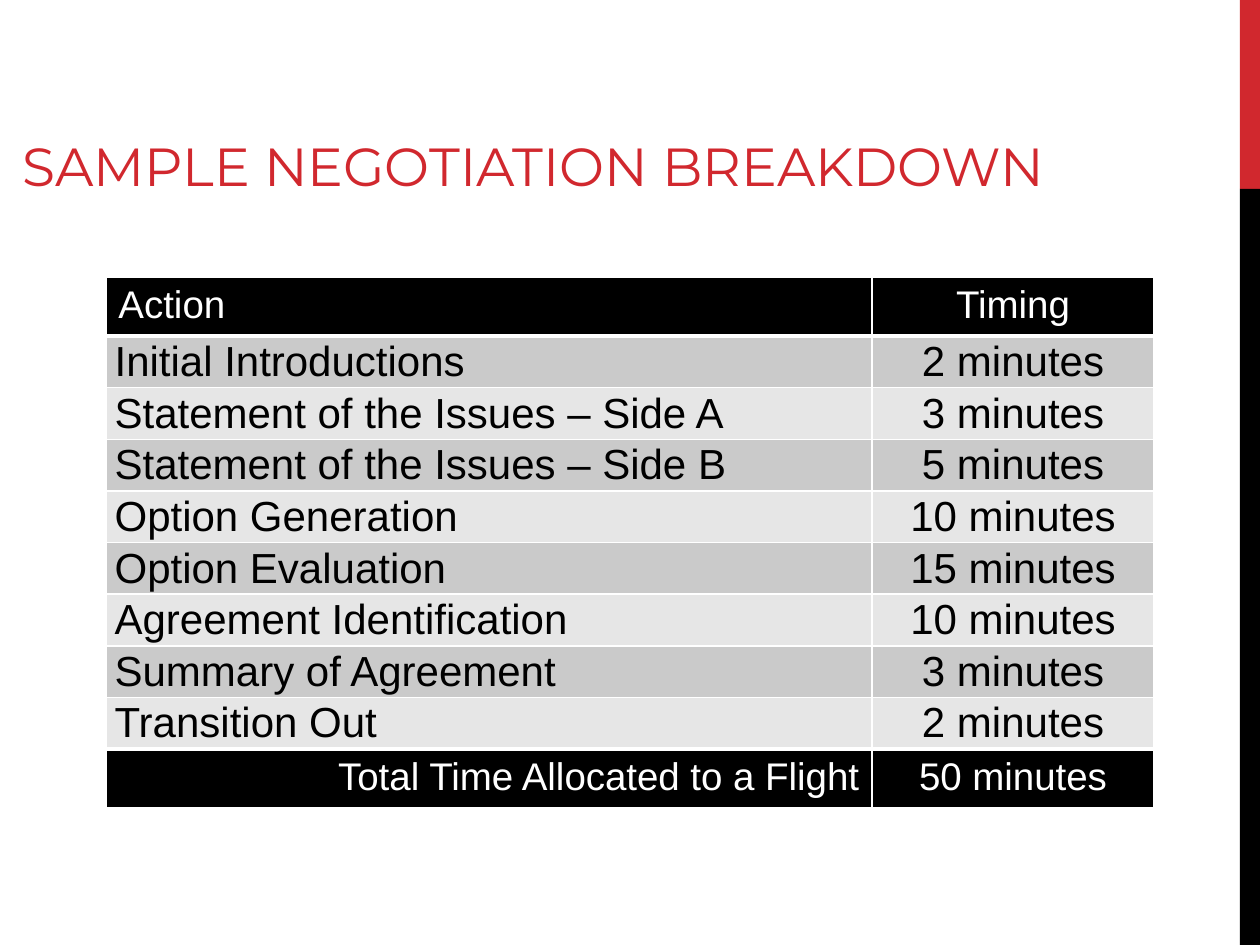
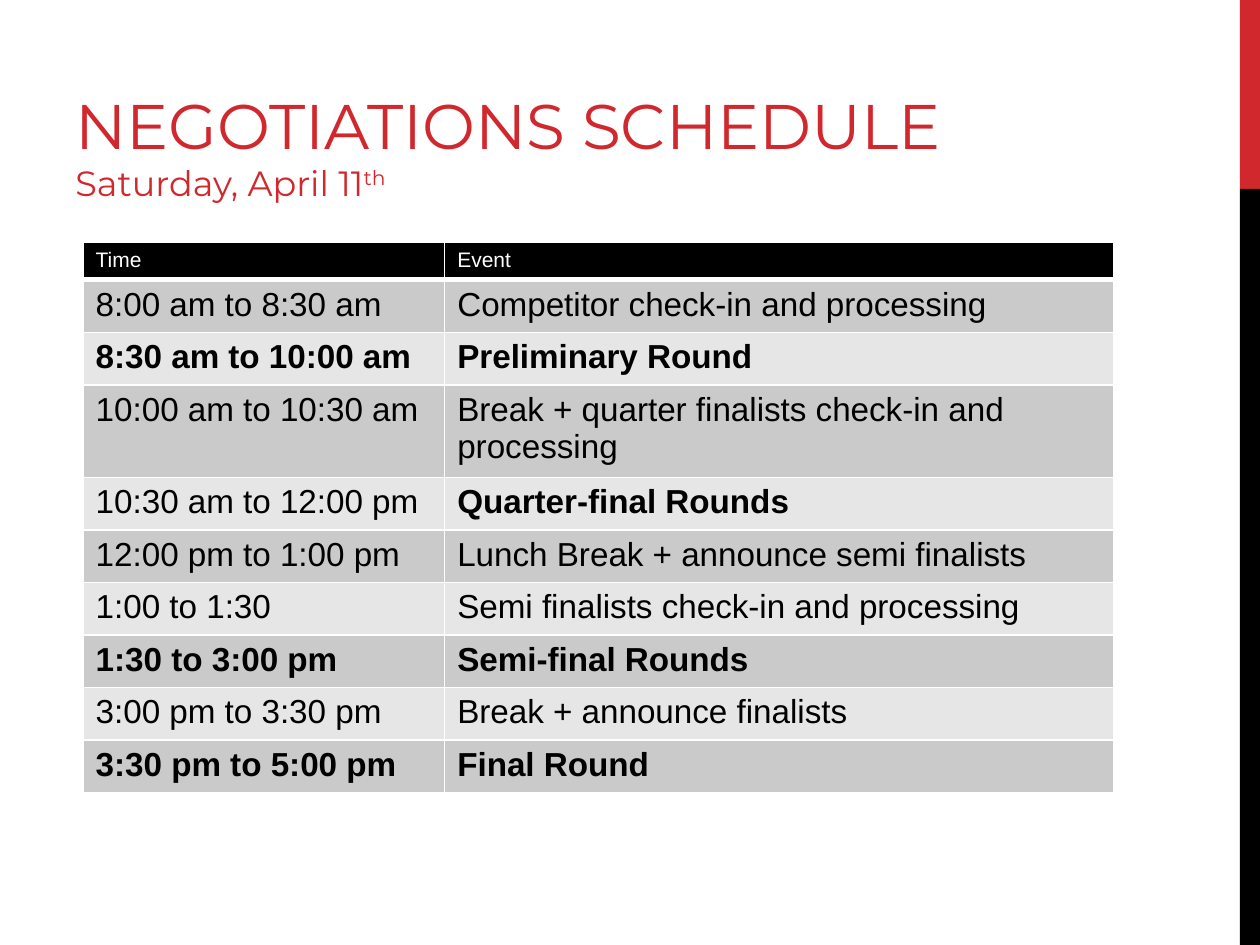
from dataclasses import dataclass
from typing import NamedTuple

from lxml import etree
from pptx import Presentation
from pptx import util as u
from pptx.dml.color import RGBColor
from pptx.enum import shapes, text
from pptx.oxml import ns

RED = RGBColor(0xD1, 0x28, 0x2E)
BLACK = RGBColor(0, 0, 0)
WHITE = RGBColor(0xFF, 0xFF, 0xFF)
DARK_BAND = RGBColor(0xCA, 0xCA, 0xCA)
LIGHT_BAND = RGBColor(0xE6, 0xE6, 0xE6)
TITLE_FONT, TABLE_FONT = "Montserrat", "Arial"
LEFT, CENTER, RIGHT = text.PP_ALIGN.LEFT, text.PP_ALIGN.CENTER, text.PP_ALIGN.RIGHT
THIN, THICK = 1, 3


class Span(NamedTuple):
    content: str
    size: float
    raised: bool = False


class Bar(NamedTuple):
    top: float
    height: float
    color: RGBColor


@dataclass(frozen=True)
class Title:
    left: float
    top: float
    width: float
    height: float
    lines: tuple[tuple[Span, ...], ...]


@dataclass(frozen=True)
class Grid:
    left: float
    top: float
    widths: tuple[float, ...]
    row_height: float
    heading: tuple[str, ...]
    rows: tuple[tuple[str, ...], ...]
    heading_size: float
    body_size: float
    aligns: tuple[text.PP_ALIGN, ...]
    total: tuple[str, ...] = ()
    bold: frozenset[str] = frozenset()
    compact: bool = False


SIDE_BARS = (Bar(0, 1.5, RED), Bar(1.5, 6, BLACK))

BREAKDOWN_TITLE = Title(0.08, 0.92, 9.84, 0.71,
                        ((Span("SAMPLE NEGOTIATION BREAKDOWN", 30.6),),))
BREAKDOWN = Grid(
    0.84, 2.2, (6.08, 2.24), 0.41,
    heading=("Action", "Timing"),
    rows=(
        ("Initial Introductions", "2 minutes"),
        ("Statement of the Issues – Side A", "3 minutes"),
        ("Statement of the Issues – Side B", "5 minutes"),
        ("Option Generation", "10 minutes"),
        ("Option Evaluation", "15 minutes"),
        ("Agreement Identification", "10 minutes"),
        ("Summary of Agreement", "3 minutes"),
        ("Transition Out", "2 minutes"),
    ),
    total=("Total Time Allocated to a Flight", "50 minutes"),
    heading_size=22, body_size=24, aligns=(LEFT, CENTER), compact=True,
)

SCHEDULE_TITLE = Title(0.5, 0.17, 8.33, 1.5, (
    (Span("NEGOTIATIONS SCHEDULE", 36),),
    (Span("Saturday, April 11", 20), Span("th", 20, raised=True)),
))
SCHEDULE = Grid(
    0.66, 1.92, (2.87, 5.31), 0.29,
    heading=("Time", "Event"),
    rows=(
        ("8:00 am to 8:30 am", "Competitor check-in and processing"),
        ("8:30 am to 10:00 am", "Preliminary Round"),
        ("10:00 am to 10:30 am", "Break + quarter finalists check-in and processing"),
        ("10:30 am to 12:00 pm", "Quarter-final Rounds"),
        ("12:00 pm to 1:00 pm", "Lunch Break + announce semi finalists"),
        ("1:00 to 1:30", "Semi finalists check-in and processing"),
        ("1:30 to 3:00 pm", "Semi-final Rounds"),
        ("3:00 pm to 3:30 pm", "Break + announce finalists"),
        ("3:30 pm to 5:00 pm", "Final Round"),
    ),
    heading_size=12, body_size=19, aligns=(LEFT, LEFT),
    bold=frozenset({
        "8:30 am to 10:00 am", "Preliminary Round", "Quarter-final Rounds",
        "1:30 to 3:00 pm", "Semi-final Rounds", "3:30 pm to 5:00 pm", "Final Round",
    }),
)


def write(para, content: str, *, size: float, font: str, color: RGBColor,
          bold: bool = False, raised: bool = False) -> None:
    span = para.add_run()
    span.text = content
    span.font.size = u.Pt(size)
    span.font.name = font
    span.font.bold = bold
    span.font.color.rgb = color
    if raised:
        span._r.get_or_add_rPr().set("baseline", "30000")


def draw_side_bars(page) -> None:
    for bar in SIDE_BARS:
        shape = page.shapes.add_shape(
            shapes.MSO_SHAPE.RECTANGLE, u.Inches(9.84), u.Inches(bar.top),
            u.Inches(0.16), u.Inches(bar.height))
        shape.shadow.inherit = False
        shape.fill.solid()
        shape.fill.fore_color.rgb = bar.color
        shape.line.fill.background()


def draw_title(page, title: Title) -> None:
    box = page.shapes.add_textbox(u.Inches(title.left), u.Inches(title.top),
                                  u.Inches(title.width), u.Inches(title.height))
    frame = box.text_frame
    frame.word_wrap = True
    frame.vertical_anchor = text.MSO_ANCHOR.BOTTOM
    para = frame.paragraphs[0]
    para.line_spacing = 0.95
    for index, line in enumerate(title.lines):
        if index:
            para.add_line_break()
        for span in line:
            write(para, span.content, size=span.size, font=TITLE_FONT,
                  color=RED, raised=span.raised)


def draw_borders(cell, top: float, bottom: float) -> None:
    properties = cell._tc.get_or_add_tcPr()
    for side, width in (("L", THIN), ("R", THIN), ("T", top), ("B", bottom)):
        line = etree.SubElement(properties, ns.qn(f"a:ln{side}"), w=str(u.Pt(width)))
        fill = etree.SubElement(line, ns.qn("a:solidFill"))
        etree.SubElement(fill, ns.qn("a:srgbClr"), val=str(WHITE))


def draw_grid(page, grid: Grid) -> None:
    rows = [grid.heading, *grid.rows] + ([grid.total] if grid.total else [])
    last = len(rows) - 1
    dark_rows = {0, last} if grid.total else {0}
    table = page.shapes.add_table(
        len(rows), len(grid.widths), u.Inches(grid.left), u.Inches(grid.top),
        u.Inches(sum(grid.widths)), u.Inches(grid.row_height * len(rows))).table
    table.first_row = table.horz_banding = False
    for column, width in zip(table.columns, grid.widths):
        column.width = u.Inches(width)

    for r, row in enumerate(rows):
        table.rows[r].height = u.Inches(grid.row_height)
        dark = r in dark_rows
        # Thick rules part the heading and total from the body
        top = THICK if r and dark != (r - 1 in dark_rows) else THIN
        bottom = THICK if r < last and dark != (r + 1 in dark_rows) else THIN
        for c, content in enumerate(row):
            cell = table.cell(r, c)
            draw_borders(cell, top, bottom)
            cell.fill.solid()
            cell.fill.fore_color.rgb = BLACK if dark else (DARK_BAND if r % 2 else LIGHT_BAND)
            if grid.compact and not dark:
                cell.margin_left = cell.margin_right = u.Inches(0.07)
                cell.margin_top = cell.margin_bottom = 0
                cell.vertical_anchor = text.MSO_ANCHOR.MIDDLE
            para = cell.text_frame.paragraphs[0]
            para.alignment = RIGHT if row is grid.total and c == 0 else grid.aligns[c]
            write(para, content, font=TABLE_FONT, bold=content in grid.bold,
                  size=grid.heading_size if dark else grid.body_size,
                  color=WHITE if dark else BLACK)


def main() -> None:
    deck = Presentation()
    deck.slide_width, deck.slide_height = u.Inches(10), u.Inches(7.5)
    for title, grid in ((BREAKDOWN_TITLE, BREAKDOWN), (SCHEDULE_TITLE, SCHEDULE)):
        page = deck.slides.add_slide(deck.slide_layouts[6])
        draw_side_bars(page)
        draw_title(page, title)
        draw_grid(page, grid)
    deck.save("out.pptx")


if __name__ == "__main__":
    main()
